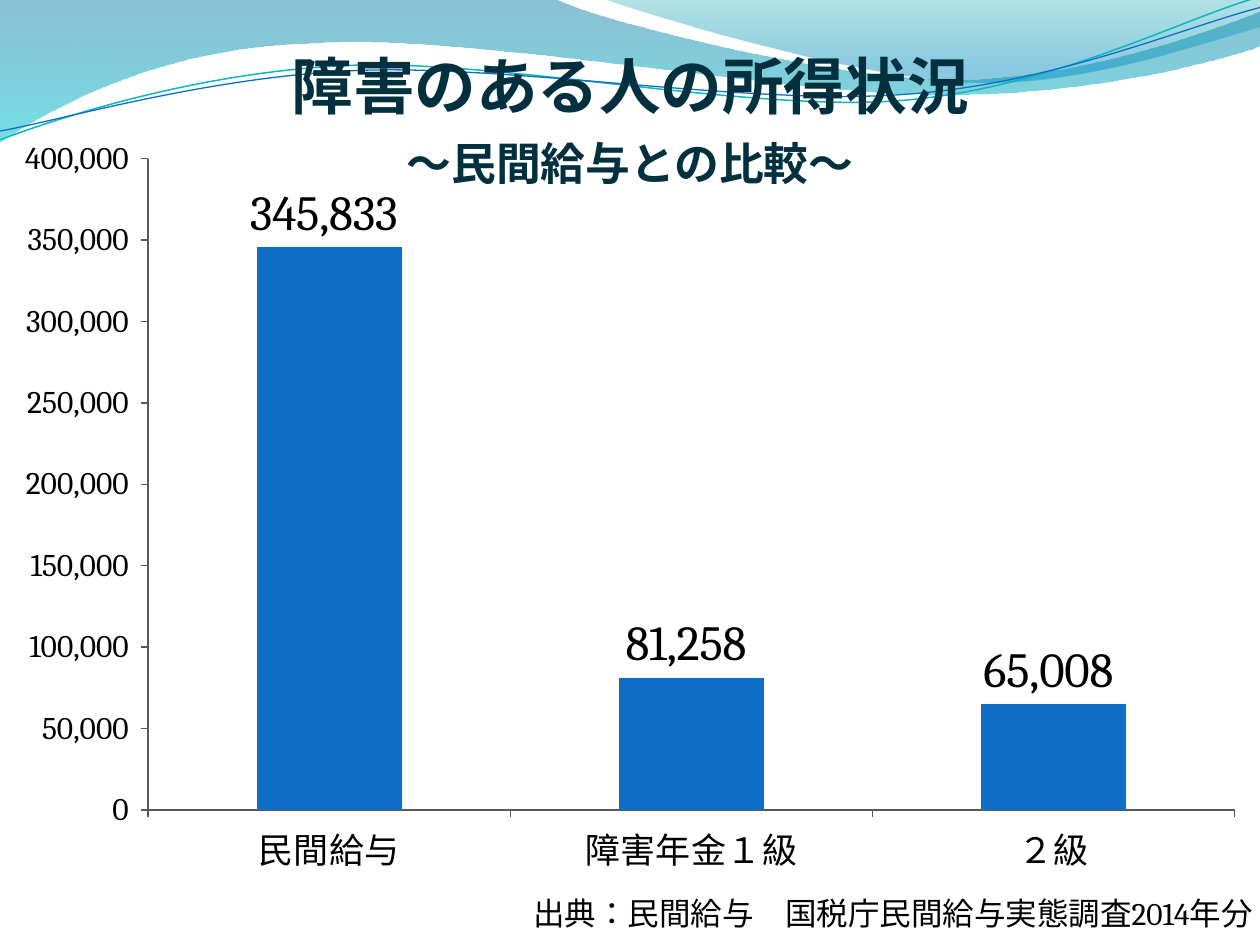
from lxml import etree
from pptx import Presentation
from pptx import util as u
from pptx.chart import data as chart_data
from pptx.dml import color as dml
from pptx.enum import chart as ce
from pptx.enum import lang, text
from pptx.oxml import ns

INCH = u.Cm(2.54)
UNITS = 1000
NUMBER_FORMAT = r"#,##0_);[Red]\(#,##0\)"


def rgb(value):
    return dml.RGBColor.from_string(value)


def write(paragraph, words, size, font, color, bold=False, align=None, small=False):
    paragraph.alignment = align
    run = paragraph.add_run()
    run.text = words
    run.font.size = u.Pt(size)
    run.font.name = font
    run.font.bold = bold
    run.font.language_id = lang.MSO_LANGUAGE_ID.JAPANESE
    run.font.color.rgb = rgb(color)
    if small:
        run.font._element.set("cap", "small")


presentation = Presentation()
presentation.slide_width = u.Cm(25.4)
presentation.slide_height = u.Cm(19.05)
slide = presentation.slides.add_slide(presentation.slide_layouts[5])

waves = [
    dict(start=(0, 0), parts=[
        (4.4, -0.01), (4.76, 0.17, 6.64, 0.63, 7.58, 0.63),
        (8.53, 0.63, 9.58, 0.26, 10, 0.09), (10.01, 0.36),
        (9.83, 0.44, 8.7, 0.76, 7.46, 0.75), (6.22, 0.75, 3.82, 0.28, 2.57, 0.34),
        (1.29, 0.36, 0.46, 0.83, -0.01, 1.13), (0, 0)],
        stops=[(0, "0074A1", 45), (1, "00C6CF", 55)]),
    dict(start=(4.79, -0.01), parts=[
        (5.09, 0.11, 6.82, 0.62, 7.69, 0.65), (8.56, 0.69, 9.61, 0.32, 10, 0.21),
        (10, 0), (4.79, -0.01)],
        stops=[(0, "00A1A9", 30), (0.8, "008BBF", 45)]),
    dict(start=(0, 1.11), parts=[
        (0.48, 0.93, 1.58, 0.57, 2.77, 0.52), (3.95, 0.47, 5.93, 0.89, 7.13, 0.8),
        (8.33, 0.71, 9.38, 0.15, 9.98, -0.02)],
        line=("0AB8BF", 0.85)),
    dict(start=(0, 1.04), parts=[
        (0.47, 0.96, 1.64, 0.61, 2.83, 0.56), (4.03, 0.51, 5.97, 0.84, 7.17, 0.75),
        (8.36, 0.67, 9.41, 0.21, 10, 0.06)],
        line=("0F6FC6", 0.75)),
]
for wave in waves:
    anchors = [wave["start"]] + [part[-2:] for part in wave["parts"]]
    left, top = (min(values) for values in zip(*anchors))
    points = [(x * UNITS, y * UNITS) for x, y in anchors]
    builder = slide.shapes.build_freeform(*points[0], scale=INCH / UNITS)
    builder.add_line_segments(points[1:], close="stops" in wave)
    shape = builder.convert_to_shape()
    shape.shadow.inherit = False
    segments = shape.element.spPr.findall(".//" + ns.qn("a:lnTo"))
    for segment, part in zip(segments, wave["parts"]):
        if len(part) == 6:
            curve = etree.Element(ns.qn("a:cubicBezTo"))
            for x, y in zip(part[::2], part[1::2]):
                point = etree.SubElement(curve, ns.qn("a:pt"))
                point.set("x", str(round((x - left) * UNITS)))
                point.set("y", str(round((y - top) * UNITS)))
            segment.getparent().replace(segment, curve)
    if "stops" in wave:
        shape.line.fill.background()
        shape.fill.gradient()
        shape.fill.gradient_angle = 270
        for stop, (position, color, opacity) in zip(shape.fill.gradient_stops, wave["stops"]):
            stop.position = position
            stop.color.rgb = rgb(color)
        colors = shape.element.spPr.findall(".//" + ns.qn("a:gs") + "/" + ns.qn("a:srgbClr"))
        for element, (position, color, opacity) in zip(colors, wave["stops"]):
            etree.SubElement(element, ns.qn("a:alpha")).set("val", str(opacity * 1000))
    else:
        color, width = wave["line"]
        shape.fill.background()
        shape.line.color.rgb = rgb(color)
        shape.line.width = u.Pt(width)

income = chart_data.CategoryChartData()
income.categories = ["民間給与", "障害年金１級", "２級"]
income.add_series("Series 1", [345833, 81258, 65008])
chart = slide.shapes.add_chart(
    ce.XL_CHART_TYPE.COLUMN_CLUSTERED, u.Cm(0), u.Cm(2.52), u.Cm(25.4), u.Cm(15.4), income).chart
chart.has_title = False
chart.has_legend = False
chart.font.size = u.Pt(18)
chart.font.name = "Cambria"
chart.font.color.rgb = rgb("000000")
for axis, size in ((chart.category_axis, 20), (chart.value_axis, 18)):
    axis.has_major_gridlines = False
    axis.major_tick_mark = ce.XL_TICK_MARK.OUTSIDE
    axis.tick_labels.font.size = u.Pt(size)
    axis.format.line.color.rgb = rgb("595959")
    axis.format.line.width = u.Pt(0.75)
chart.value_axis.tick_labels.number_format = NUMBER_FORMAT
chart.value_axis.tick_labels.number_format_is_linked = False
plot = chart.plots[0]
plot.gap_width = 150
plot.vary_by_categories = False
fill = plot.series[0].format.fill
fill.solid()
fill.fore_color.rgb = rgb("0F6FC6")
plot.has_data_labels = True
labels = plot.data_labels
labels.show_value = True
labels.position = ce.XL_LABEL_POSITION.OUTSIDE_END
labels.number_format = NUMBER_FORMAT
labels.number_format_is_linked = False
labels.font.size = u.Pt(28)

title = slide.shapes.title
title.left, title.top, title.width, title.height = u.Cm(0), u.Cm(0.53), u.Cm(25.4), u.Cm(3.99)
title.element.getparent().append(title.element)
frame = title.text_frame
frame.auto_size = text.MSO_AUTO_SIZE.NONE
frame.vertical_anchor = text.MSO_ANCHOR.MIDDLE
frame.margin_bottom = u.Cm(0.65)
heading = dict(font="Arial", color="02303E", bold=True, align=text.PP_ALIGN.CENTER, small=True)
write(frame.paragraphs[0], "障害のある人の所得状況", size=44, **heading)
write(frame.add_paragraph(), "～民間給与との比較～", size=32, **heading)

source = slide.shapes.add_textbox(u.Cm(8.1), u.Cm(17.9), u.Cm(17.4), u.Cm(1.02))
source.text_frame.word_wrap = True
source.text_frame.auto_size = text.MSO_AUTO_SIZE.SHAPE_TO_FIT_TEXT
write(source.text_frame.paragraphs[0], "出典：民間給与　国税庁民間給与実態調査2014年分",
      size=18, font="Cambria", color="000000", align=text.PP_ALIGN.RIGHT)

presentation.save("out.pptx")
